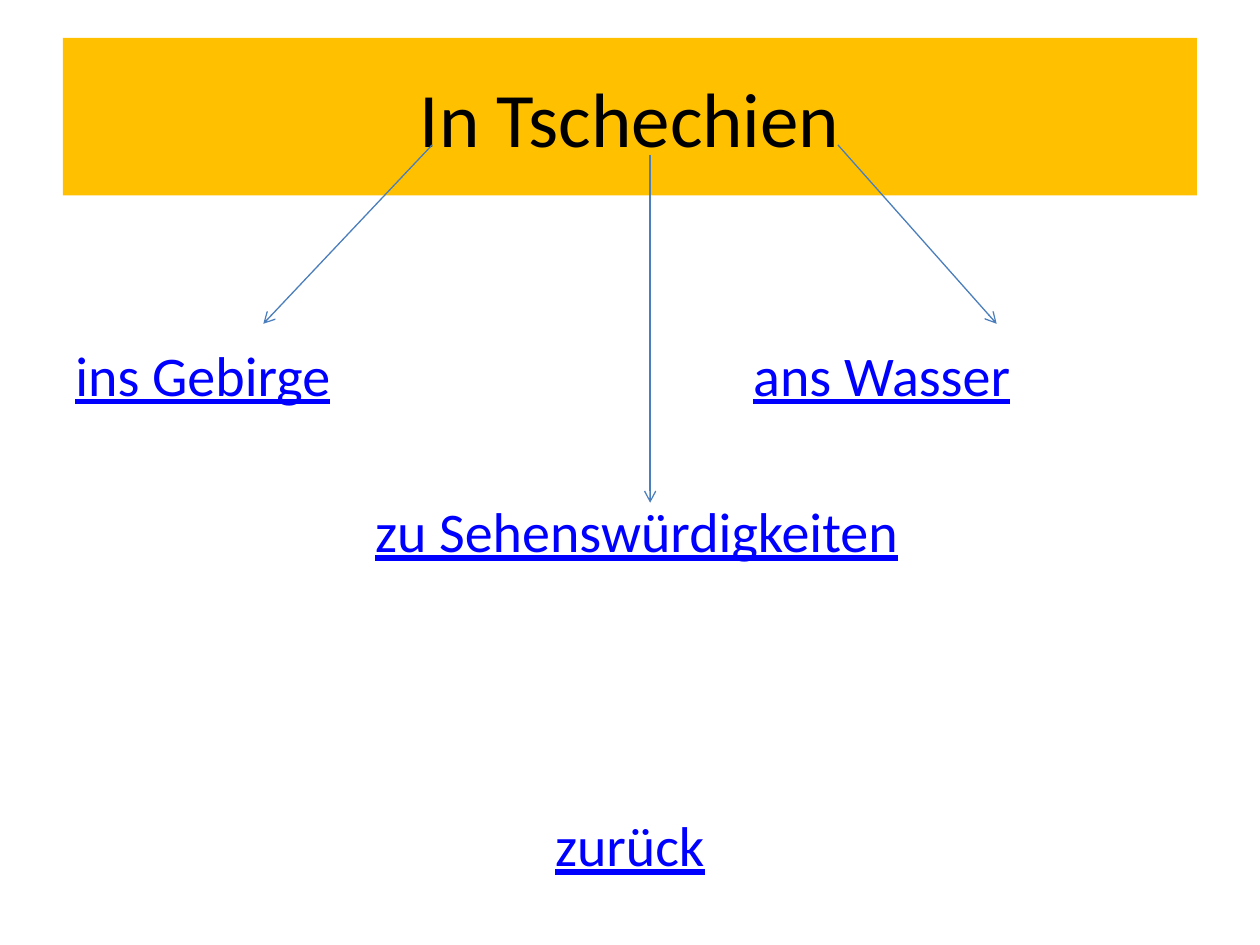
from lxml.etree import SubElement
from pptx import Presentation
from pptx.dml.color import RGBColor
from pptx.enum.shapes import MSO_CONNECTOR, MSO_SHAPE
from pptx.enum.text import MSO_ANCHOR, PP_ALIGN
from pptx.oxml.ns import qn
from pptx.util import Inches, Pt

TITLE_FONT = {"name": "Calibri", "size": Pt(44), "underline": False}
GAP_FONT = {"name": "Calibri", "size": Pt(32), "underline": False}
LINK_FONT = {**GAP_FONT, "underline": True}


def rgb(color):
    """Turn a hex string into a colour."""
    return RGBColor.from_string(color)


def add_run(paragraph, text, font_format, color):
    """Append a formatted run to a paragraph."""
    run = paragraph.add_run()
    run.text = text
    for name, value in font_format.items():
        setattr(run.font, name, value)
    run.font.color.rgb = rgb(color)


def add_title(slide, text):
    """Add the coloured title bar."""
    shape = slide.shapes.add_shape(
        MSO_SHAPE.RECTANGLE, Inches(0.5), Inches(0.3), Inches(9), Inches(1.25))
    shape.shadow.inherit = False
    shape.fill.solid()
    shape.fill.fore_color.rgb = rgb("FFC000")
    shape.line.fill.background()
    shape.text_frame.vertical_anchor = MSO_ANCHOR.MIDDLE
    paragraph = shape.text_frame.paragraphs[0]
    paragraph.alignment = PP_ALIGN.CENTER
    add_run(paragraph, text, TITLE_FONT, "000000")


def add_tab_stop(paragraph, position):
    """Set a left tab stop on a paragraph."""
    tab_list = SubElement(paragraph._p.get_or_add_pPr(), qn("a:tabLst"))
    SubElement(tab_list, qn("a:tab"), pos=str(position), algn="l")


def add_destinations(slide):
    """Add the body text with the destinations and the way back."""
    box = slide.shapes.add_textbox(
        Inches(0.5), Inches(2.65), Inches(9), Inches(4.49))
    frame = box.text_frame
    frame.word_wrap = True
    rows = [
        (["ins Gebirge", "ans Wasser"], 5.38, 0, PP_ALIGN.LEFT),
        (["", "zu Sehenswürdigkeiten"], 2.38, 51, PP_ALIGN.LEFT),
        (["zurück"], None, 141, PP_ALIGN.CENTER),
    ]
    for index, (labels, tab, space, alignment) in enumerate(rows):
        paragraph = frame.add_paragraph() if index else frame.paragraphs[0]
        if tab:
            add_tab_stop(paragraph, Inches(tab))
        paragraph.alignment = alignment
        if space:
            paragraph.space_before = Pt(space)
        for column, label in enumerate(labels):
            if column:
                add_run(paragraph, "\t", GAP_FONT, "000000")
            if label:
                add_run(paragraph, label, LINK_FONT, "0000FF")


def add_arrow(slide, start, end):
    """Add a straight line with an open arrowhead at its end."""
    connector = slide.shapes.add_connector(
        MSO_CONNECTOR.STRAIGHT, *map(Inches, start + end))
    connector.line.color.rgb = rgb("4B7EBC")
    connector.line.width = Pt(0.75)
    SubElement(connector.line._get_or_add_ln(), qn("a:tailEnd"), type="arrow")
    SubElement(connector._element.spPr, qn("a:effectLst"))


def main():
    """Build the slide and save it."""
    presentation = Presentation()
    presentation.slide_width = Inches(10)
    presentation.slide_height = Inches(7.5)
    slide = presentation.slides.add_slide(presentation.slide_layouts[6])
    add_title(slide, "In Tschechien")
    add_destinations(slide)
    for start, end in [
        ((3.43, 1.15), (2.09, 2.57)),
        ((6.65, 1.15), (7.91, 2.57)),
        ((5.16, 1.23), (5.16, 3.99)),
    ]:
        add_arrow(slide, start, end)
    presentation.save("out.pptx")


if __name__ == "__main__":
    main()
